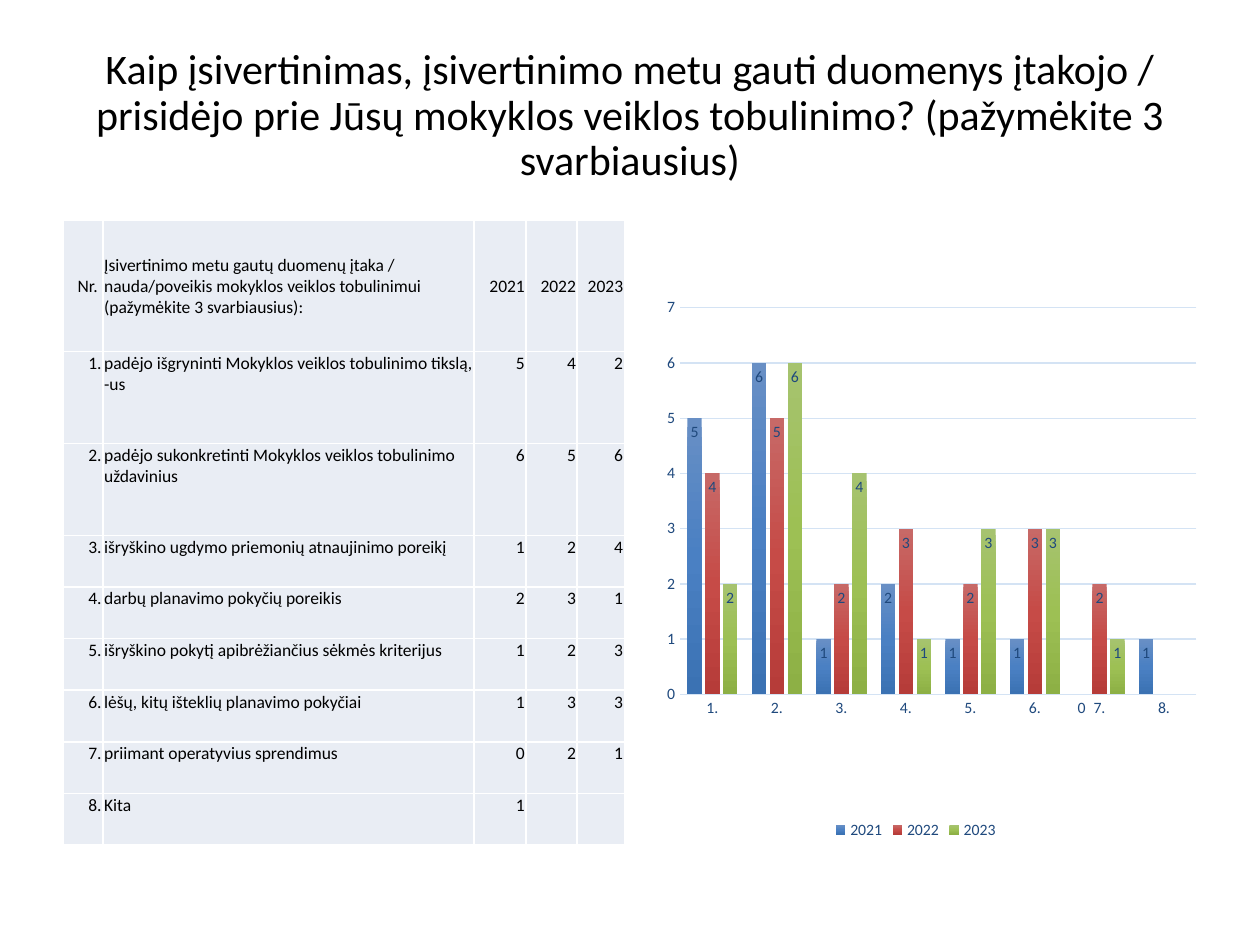
"""Build a slide with a survey table and a column chart of its three years."""
from dataclasses import dataclass

from pptx import Presentation
from pptx.chart.data import CategoryChartData
from pptx.dml.color import RGBColor
from pptx.enum.chart import (XL_CHART_TYPE, XL_LABEL_POSITION,
                             XL_LEGEND_POSITION, XL_TICK_MARK)
from pptx.enum.text import MSO_ANCHOR, PP_ALIGN
from pptx.oxml import parse_xml
from pptx.oxml.ns import nsdecls
from pptx.util import Pt

COLUMN = XL_CHART_TYPE.COLUMN_CLUSTERED
IN_END = XL_LABEL_POSITION.INSIDE_END
BOTTOM = XL_LEGEND_POSITION.BOTTOM
NO_TICK = XL_TICK_MARK.NONE
TOP, MIDDLE = MSO_ANCHOR.TOP, MSO_ANCHOR.MIDDLE
LEFT, CENTER, RIGHT = PP_ALIGN.LEFT, PP_ALIGN.CENTER, PP_ALIGN.RIGHT


@dataclass(frozen=True)
class Theme:
    font: str = "Calibri"
    ink: str = "000000"
    navy: str = "1F497D"
    grid: str = "D4E3F4"
    cell: str = "E9EDF4"
    rule: str = "FFFFFF"
    head: float = 24
    body: float = 10
    small: float = 9
    bars: tuple = (("688FC5", "4A80C3", "3B72B3"),
                   ("C76967", "C64B47", "B63C39"),
                   ("A6C36F", "9DC054", "8DB045"))


THEME = Theme()
TITLE = ("Kaip įsivertinimas, įsivertinimo metu gauti duomenys įtakojo / "
         "prisidėjo prie Jūsų mokyklos veiklos tobulinimo? "
         "(pažymėkite 3 svarbiausius)")
LEAD = ("Įsivertinimo metu gautų duomenų įtaka / nauda/poveikis mokyklos "
        "veiklos tobulinimui (pažymėkite 3 svarbiausius):")
YEARS = ("2021", "2022", "2023")
ITEMS = (
    ("padėjo išgryninti Mokyklos veiklos tobulinimo tikslą, -us", 5, 4, 2),
    ("padėjo sukonkretinti Mokyklos veiklos tobulinimo uždavinius", 6, 5, 6),
    ("išryškino ugdymo priemonių atnaujinimo poreikį", 1, 2, 4),
    ("darbų planavimo pokyčių poreikis", 2, 3, 1),
    ("išryškino pokytį apibrėžiančius sėkmės kriterijus", 1, 2, 3),
    ("lėšų, kitų išteklių planavimo pokyčiai", 1, 3, 3),
    ("priimant operatyvius sprendimus", 0, 2, 1),
    ("Kita", 1, None, None),
)
MARKS = [f"{n}." for n in range(1, len(ITEMS) + 1)]
WIDTHS = (22.8, 212.2, 29.6, 29.2, 27)
HEIGHTS = (75, 52.5, 52.5) + (29.5,) * 6
PLOT = {"x": 0.08, "y": 0.14, "w": 0.92, "h": 0.62}


def style(font, size, color):
    font.name = THEME.font
    font.size = Pt(size)
    font.bold = False
    font.color.rgb = RGBColor.from_string(color)


def write(frame, text, size, align):
    para = frame.paragraphs[0]
    para.alignment = align
    run = para.add_run()
    run.text = text
    style(run.font, size, THEME.ink)
    return para


def add_title(slide):
    title = slide.shapes.title
    title.left, title.top, title.width, title.height = map(
        Pt, (36, 21.6, 648, 90))
    title.text_frame.vertical_anchor = MIDDLE
    para = write(title.text_frame, TITLE, THEME.head, CENTER)
    para.line_spacing = 0.9


def edge(cell):
    props = cell._tc.get_or_add_tcPr()
    for spot, side in enumerate("LRTB"):
        props.insert(spot, parse_xml(
            f'<a:ln{side} {nsdecls("a")} w="{Pt(1)}"><a:solidFill>'
            f'<a:srgbClr val="{THEME.rule}"/></a:solidFill></a:ln{side}>'))


def fill_cell(cell, text, align, anchor):
    cell.margin_left = cell.margin_right = cell.margin_top = Pt(0.75)
    cell.margin_bottom = Pt(0)
    cell.vertical_anchor = anchor
    cell.fill.solid()
    cell.fill.fore_color.rgb = RGBColor.from_string(THEME.cell)
    edge(cell)
    if text is not None:
        write(cell.text_frame, str(text), THEME.body, align)


def add_grid(slide):
    rows = [("Nr. ", LEAD, *YEARS)]
    rows += [(mark, *item) for mark, item in zip(MARKS, ITEMS)]
    table = slide.shapes.add_table(
        len(rows), len(WIDTHS), Pt(36), Pt(126),
        Pt(sum(WIDTHS)), Pt(sum(HEIGHTS))).table
    table.first_row = table.horz_banding = False
    for col, width in zip(table.columns, WIDTHS):
        col.width = Pt(width)
    for r, (row, height) in enumerate(zip(rows, HEIGHTS)):
        table.rows[r].height = Pt(height)
        for c, text in enumerate(row):
            fill_cell(table.cell(r, c), text, LEFT if c == 1 else RIGHT,
                      TOP if r else MIDDLE)


def paint(series, colors):
    stops = "".join(
        f'<a:gs pos="{n * 50000}"><a:srgbClr val="{color}"/></a:gs>'
        for n, color in enumerate(colors))
    series._element.get_or_add_spPr().insert(0, parse_xml(
        f'<a:gradFill {nsdecls("a")} rotWithShape="1"><a:gsLst>{stops}'
        '</a:gsLst><a:lin ang="5400000" scaled="0"/></a:gradFill>'))
    labels = series.data_labels
    labels.show_value = True
    labels.position = IN_END
    style(labels.font, THEME.small, THEME.navy)


def draw_line(line):
    line.width = Pt(0.75)
    line.color.rgb = RGBColor.from_string(THEME.grid)


def set_axes(chart):
    cats, vals = chart.category_axis, chart.value_axis
    for axis in (cats, vals):
        axis.major_tick_mark = axis.minor_tick_mark = NO_TICK
        style(axis.tick_labels.font, THEME.small, THEME.navy)
    draw_line(cats.format.line)
    vals.format.line.fill.background()
    vals.minimum_scale, vals.maximum_scale, vals.major_unit = 0, 7, 1
    vals.has_major_gridlines = True
    draw_line(vals.major_gridlines.format.line)


def set_plot(chart):
    area = chart._chartSpace.chart.plotArea
    for old in area.xpath("c:layout"):
        area.remove(old)
    sizes = "".join(f'<c:{key} val="{val}"/>' for key, val in PLOT.items())
    area.insert(0, parse_xml(
        f'<c:layout {nsdecls("c")}><c:manualLayout>'
        '<c:layoutTarget val="inner"/><c:xMode val="edge"/>'
        f'<c:yMode val="edge"/>{sizes}</c:manualLayout></c:layout>'))


def add_bars(slide):
    data = CategoryChartData()
    data.categories = MARKS
    for n, year in enumerate(YEARS, 1):
        data.add_series(year, [item[n] for item in ITEMS])
    chart = slide.shapes.add_chart(
        COLUMN, Pt(363), Pt(126), Pt(321), Pt(356.4), data).chart
    style(chart.font, THEME.body, THEME.ink)
    chart.has_title = False
    chart.has_legend = True
    chart.legend.position = BOTTOM
    chart.legend.include_in_layout = False
    style(chart.legend.font, THEME.small, THEME.navy)
    plot = chart.plots[0]
    plot.gap_width, plot.overlap = 100, -24
    plot.vary_by_categories = False
    for series, colors in zip(plot.series, THEME.bars):
        paint(series, colors)
    set_axes(chart)
    set_plot(chart)


def main():
    deck = Presentation()
    deck.slide_width, deck.slide_height = Pt(720), Pt(540)
    slide = deck.slides.add_slide(deck.slide_layouts[5])
    add_title(slide)
    add_grid(slide)
    add_bars(slide)
    deck.save("out.pptx")


if __name__ == "__main__":
    main()
